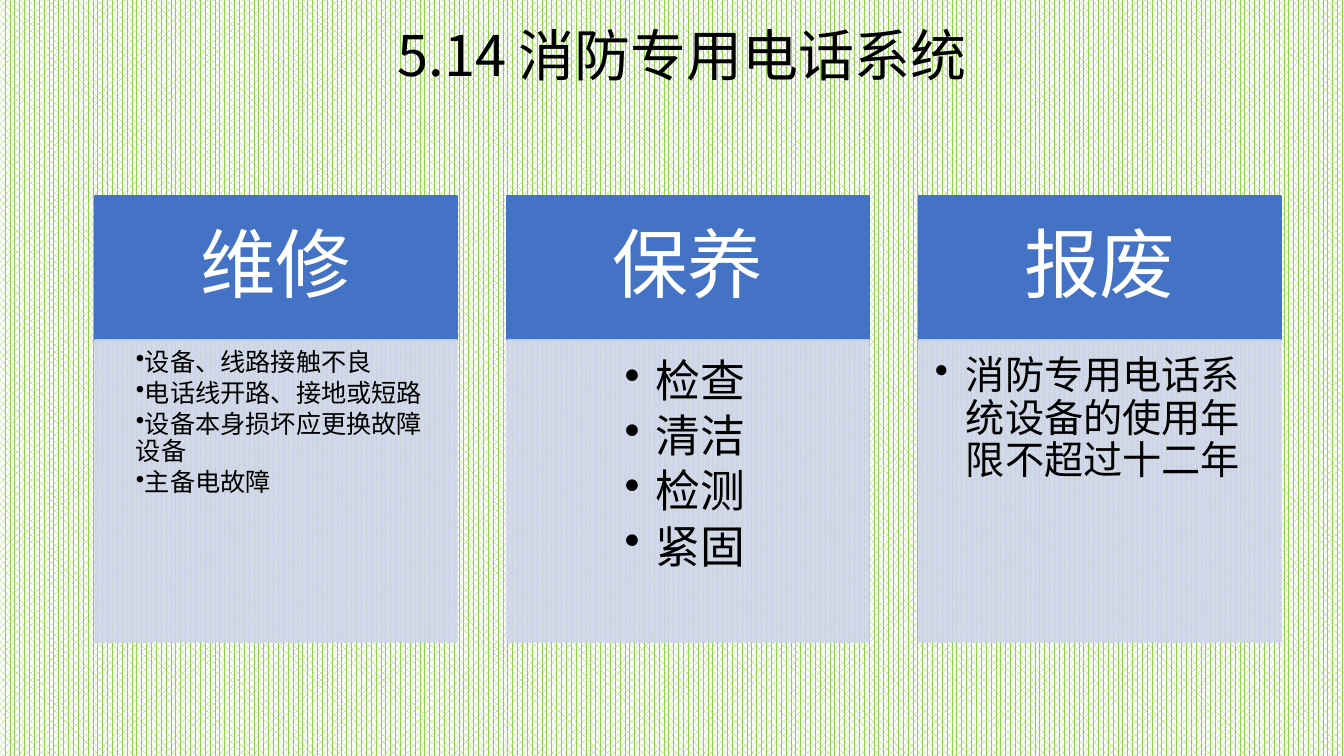
from lxml import etree
from pptx import Presentation
from pptx.dml.color import RGBColor
from pptx.enum.dml import MSO_PATTERN
from pptx.enum.shapes import MSO_SHAPE
from pptx.enum.text import MSO_ANCHOR, PP_ALIGN
from pptx.oxml.ns import qn
from pptx.util import Emu, Pt

RECTANGLE = MSO_SHAPE.RECTANGLE
PERCENT_70 = MSO_PATTERN.PERCENT_70
TOP, MIDDLE = MSO_ANCHOR.TOP, MSO_ANCHOR.MIDDLE
LEFT, CENTER = PP_ALIGN.LEFT, PP_ALIGN.CENTER

BLACK = RGBColor(0x00, 0x00, 0x00)
WHITE = RGBColor(0xFF, 0xFF, 0xFF)
GREEN = RGBColor(0x92, 0xD0, 0x50)
BLUE = RGBColor(0x44, 0x72, 0xC4)
PALE_BLUE = RGBColor(0xCF, 0xD5, 0xEA)

FONT = "Noto Sans CJK SC"
SCALE = 914400 / 100.8
COLUMN_LEFT, COLUMN_STEP, COLUMN_WIDTH = 95, 412, 362
HEADER_TOP, HEADER_HEIGHT, BODY_HEIGHT = 196, 144, 302
BULLET_MARGIN = 31

COLUMNS = [
    ("维修", ["设备、线路接触不良", "电话线开路、接地或短路", "设备本身损坏应更换故障设备", "主备电故障"],
     {"size": 18, "align": LEFT, "indent": 0}, (10, 10, 14, 16)),
    ("保养", ["检查", "清洁", "检测", "紧固"],
     {"size": 32, "align": CENTER, "indent": -BULLET_MARGIN}, (19, 19, 25, 28)),
    ("报废", ["消防专用电话系统设备的使用年限不超过十二年"],
     {"size": 28, "align": LEFT, "indent": -BULLET_MARGIN}, (16, 16, 22, 24)),
]


def px(length):
    """Turn a length in px into EMU."""
    return Emu(round(length * SCALE))


def set_all(target, values):
    """Set every attribute named in a dict of format values."""
    for name, value in values.items():
        setattr(target, name, value)


def set_frame(box, anchor, insets):
    """Set wrapping, anchor and insets (left, top, right, bottom)."""
    sides = ("margin_left", "margin_top", "margin_right", "margin_bottom")
    margins = dict(zip(sides, map(px, insets)))
    set_all(box.text_frame, {"word_wrap": True, "vertical_anchor": anchor, **margins})


def add_bullet(para, indent):
    """Give a paragraph a round bullet with its margin and indent."""
    para.level = 1
    properties = para._p.get_or_add_pPr()
    properties.set("marL", str(px(BULLET_MARGIN)))
    properties.set("indent", str(px(indent)))
    etree.SubElement(properties, qn("a:buChar")).set("char", "•")


def write_lines(box, lines, size, align, color, indent=None):
    """Write one paragraph a line, bulleted when an indent is given."""
    frame = box.text_frame
    for number, line in enumerate(lines):
        para = frame.add_paragraph() if number else frame.paragraphs[0]
        set_all(para, {"alignment": align, "line_spacing": 0.9, "space_after": Pt(size * 0.15)})
        if indent is not None:
            add_bullet(para, indent)
        span = para.add_run()
        set_all(span, {"text": line})
        set_all(span.font, {"name": FONT, "size": Pt(size)})
        span.font.color.rgb = color
        etree.SubElement(span._r.get_or_add_rPr(), qn("a:ea")).set("typeface", FONT)


def add_panel(page, left, top, height, color, opacity=100):
    """Add a column rectangle with fill and line of one colour."""
    panel = page.shapes.add_shape(RECTANGLE, px(left), px(top), px(COLUMN_WIDTH), px(height))
    panel.shadow.inherit = False
    panel.fill.solid()
    panel.fill.fore_color.rgb = color
    panel.line.color.rgb = color
    panel.line.width = Pt(1)
    if opacity < 100:
        for paint in panel._element.spPr.iter(qn("a:srgbClr")):
            etree.SubElement(paint, qn("a:alpha")).set("val", str(opacity * 1000))
    return panel


def add_column(page, left, heading, lines, style, insets):
    """Add a blue header and the bulleted panel below it."""
    header = add_panel(page, left, HEADER_TOP, HEADER_HEIGHT, BLUE)
    set_frame(header, MIDDLE, (42, 24, 42, 24))
    write_lines(header, [heading], 54, CENTER, WHITE)
    body = add_panel(page, left, HEADER_TOP + HEADER_HEIGHT, BODY_HEIGHT, PALE_BLUE, 90)
    set_frame(body, TOP, insets)
    write_lines(body, lines, color=BLACK, **style)


def add_title(page, text):
    """Add the centred slide title."""
    title = page.shapes.add_textbox(px(124), px(23), px(1116), px(95))
    set_frame(title, TOP, (10, 5, 10, 5))
    write_lines(title, [text], 40, CENTER, BLACK)


def set_background(page):
    """Fill the page with the green and white pattern."""
    fill = page.background.fill
    fill.patterned()
    fill.pattern = PERCENT_70
    fill.fore_color.rgb = GREEN
    fill.back_color.rgb = WHITE


def main():
    """Build the slide and save the deck."""
    deck = Presentation()
    set_all(deck, {"slide_width": px(1344), "slide_height": px(756)})
    page = deck.slides.add_slide(deck.slide_layouts[6])
    set_background(page)
    add_title(page, "5.14 消防专用电话系统")
    for number, column in enumerate(COLUMNS):
        add_column(page, COLUMN_LEFT + number * COLUMN_STEP, *column)
    deck.save("out.pptx")


if __name__ == "__main__":
    main()
